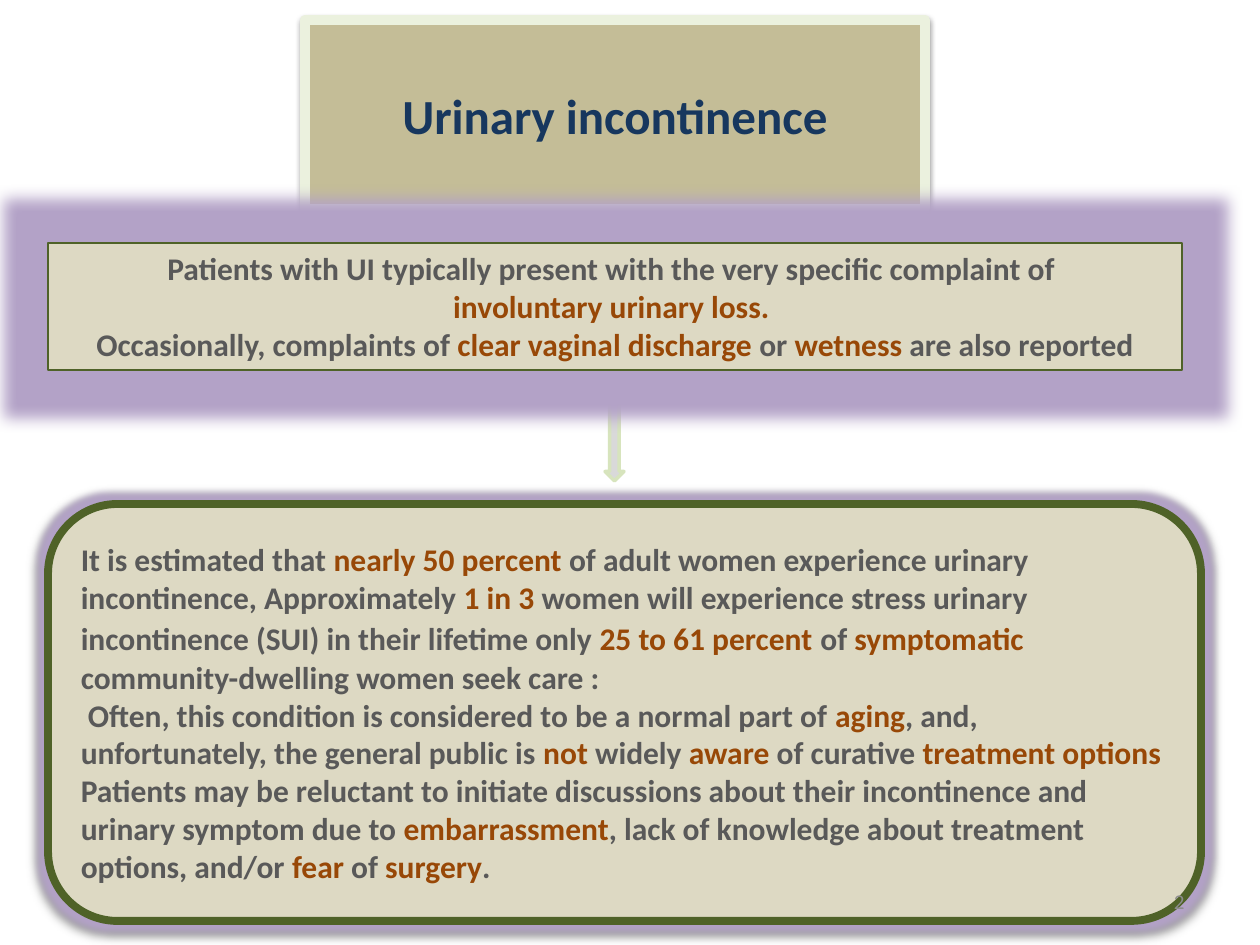
from lxml import etree
from pptx import Presentation
from pptx.dml.color import RGBColor
from pptx.enum.shapes import MSO_SHAPE
from pptx.enum.text import MSO_ANCHOR, MSO_AUTO_SIZE, PP_ALIGN
from pptx.oxml import parse_xml
from pptx.oxml.ns import nsdecls, qn
from pptx.util import Emu, Pt

PX = 914400 / 126
TITLE_ONLY = 5
RECT, ROUNDED, ARROW = MSO_SHAPE.RECTANGLE, MSO_SHAPE.ROUNDED_RECTANGLE, MSO_SHAPE.DOWN_ARROW
TOP, MIDDLE = MSO_ANCHOR.TOP, MSO_ANCHOR.MIDDLE
LEFT, CENTER, RIGHT = PP_ALIGN.LEFT, PP_ALIGN.CENTER, PP_ALIGN.RIGHT
GROW, NO_FIT = MSO_AUTO_SIZE.SHAPE_TO_FIT_TEXT, MSO_AUTO_SIZE.NONE

COLORS = {
    "navy": "17375E", "gray": "595959", "brown": "984807", "number": "8C8C8C",
    "khaki": "C4BD97", "sand": "DDD9C3", "green": "4F6228", "pale": "EBF1DE",
    "lime": "D7E4BD", "silver": "D9D9D9", "purple": "B3A2C7", "black": "000000",
}
STYLES = {
    "title": ("navy", {"size": Pt(28), "bold": True}),
    "body": ("gray", {"size": Pt(18), "bold": True}),
    "key": ("brown", {"size": Pt(18), "bold": True}),
    "gap": ("brown", {"size": Pt(20), "bold": True}),
    "number": ("number", {"size": Pt(12), "bold": False}),
}

COMPLAINTS = [
    [("Patients with UI typically present with the very specific complaint of ", "body")],
    [("involuntary urinary loss. ", "key")],
    [("Occasionally, complaints of ", "body"), ("clear vaginal discharge ", "key"),
     ("or ", "body"), ("wetness", "key"), (" are also reported", "body")],
]
PREVALENCE = [
    [("It is estimated that ", "body"), ("nearly 50 percent ", "key"),
     ("of adult women experience urinary incontinence, Approximately ", "body"),
     ("1 in 3 ", "key"),
     ("women will experience stress urinary incontinence (SUI) in their lifetime only ", "body"),
     ("25 to 61 percent", "key"), (" ", "gap"), ("of ", "body"), ("symptomatic ", "key"),
     ("community-dwelling women seek care :", "body")],
    [(" Often, this condition is considered to be a normal part of ", "body"),
     ("aging", "key"), (", and,", "body")],
    [("unfortunately, the general public is ", "body"), ("not", "key"), (" widely ", "body"),
     ("aware", "key"), (" of curative ", "body"), ("treatment options", "key")],
    [("Patients may be reluctant to initiate discussions about their incontinence "
      "and urinary symptom due to ", "body"),
     ("embarrassment", "key"),
     (", lack of knowledge about treatment options, and/or ", "body"),
     ("fear", "key"), (" of ", "body"), ("surgery", "key"), (".", "body")],
]


def px(*values):
    return [Emu(round(v * PX)) for v in values]


def rgb(name):
    return RGBColor.from_string(COLORS[name])


def paint(sp, fill, line, width):
    sp.shadow.inherit = False
    sp.fill.solid()
    sp.fill.fore_color.rgb = rgb(fill)
    sp.line.color.rgb = rgb(line)
    sp.line.width = Pt(width)


def add_effect(sp, tag, color, alpha, **attrs):
    effects = sp._element.spPr.find(qn("a:effectLst"))
    effect = etree.SubElement(effects, qn(tag), {k: str(v) for k, v in attrs.items()})
    clr = etree.SubElement(effect, qn("a:srgbClr"), val=COLORS[color])
    etree.SubElement(clr, qn("a:alpha"), val=str(alpha * 1000))


def add_glow(sp, radius):
    add_effect(sp, "a:glow", "purple", 100, rad=Pt(radius))


def add_shadow(sp):
    add_effect(sp, "a:outerShdw", "black", 38, blurRad=Pt(3.1), dist=Pt(1.6),
               dir=5400000, rotWithShape=0)


def write(sp, paragraphs, align, anchor, fit=NO_FIT):
    tf = sp.text_frame
    frame = {"word_wrap": True, "auto_size": fit, "vertical_anchor": anchor}
    for name, value in frame.items():
        setattr(tf, name, value)
    for i, runs in enumerate(paragraphs):
        p = tf.paragraphs[0] if i == 0 else tf.add_paragraph()
        p.alignment = align
        for text, style in runs:
            r = p.add_run()
            r.text = text
            color, font = STYLES[style]
            for name, value in {"name": "Calibri", **font}.items():
                setattr(r.font, name, value)
            r.font.color.rgb = rgb(color)


def add_title(slide, box):
    sp = slide.shapes.title
    sp.left, sp.top, sp.width, sp.height = px(*box)
    sp._element.spPr.append(parse_xml(
        f'<a:prstGeom {nsdecls("a")} prst="downArrowCallout"><a:avLst/></a:prstGeom>'))
    paint(sp, "khaki", "pale", 6)
    add_shadow(sp)
    write(sp, [[("Urinary incontinence", "title")]], CENTER, MIDDLE)


def add_box(slide, kind, box, fill, line, width):
    sp = slide.shapes.add_shape(kind, *px(*box))
    paint(sp, fill, line, width)
    return sp


def add_number(slide, box, text):
    sp = slide.shapes.add_textbox(*px(*box))
    write(sp, [[(text, "number")]], RIGHT, MIDDLE)


def main():
    prs = Presentation()
    prs.slide_width, prs.slide_height = px(1260, 945)
    slide = prs.slides.add_slide(prs.slide_layouts[TITLE_ONLY])

    add_title(slide, (305, 20, 620, 189))

    prevalence = add_box(slide, ROUNDED, (48, 504, 1153, 417), "sand", "green", 4.5)
    add_glow(prevalence, 8)
    add_shadow(prevalence)
    write(prevalence, PREVALENCE, LEFT, MIDDLE)

    add_box(slide, ARROW, (605, 387, 19, 94), "silver", "lime", 2)

    complaints = add_box(slide, RECT, (48, 243, 1134, 127), "sand", "green", 0.75)
    add_glow(complaints, 18)
    write(complaints, COMPLAINTS, CENTER, TOP, GROW)

    add_number(slide, (903, 876, 294, 50), "2")
    prs.save("out.pptx")


if __name__ == "__main__":
    main()
